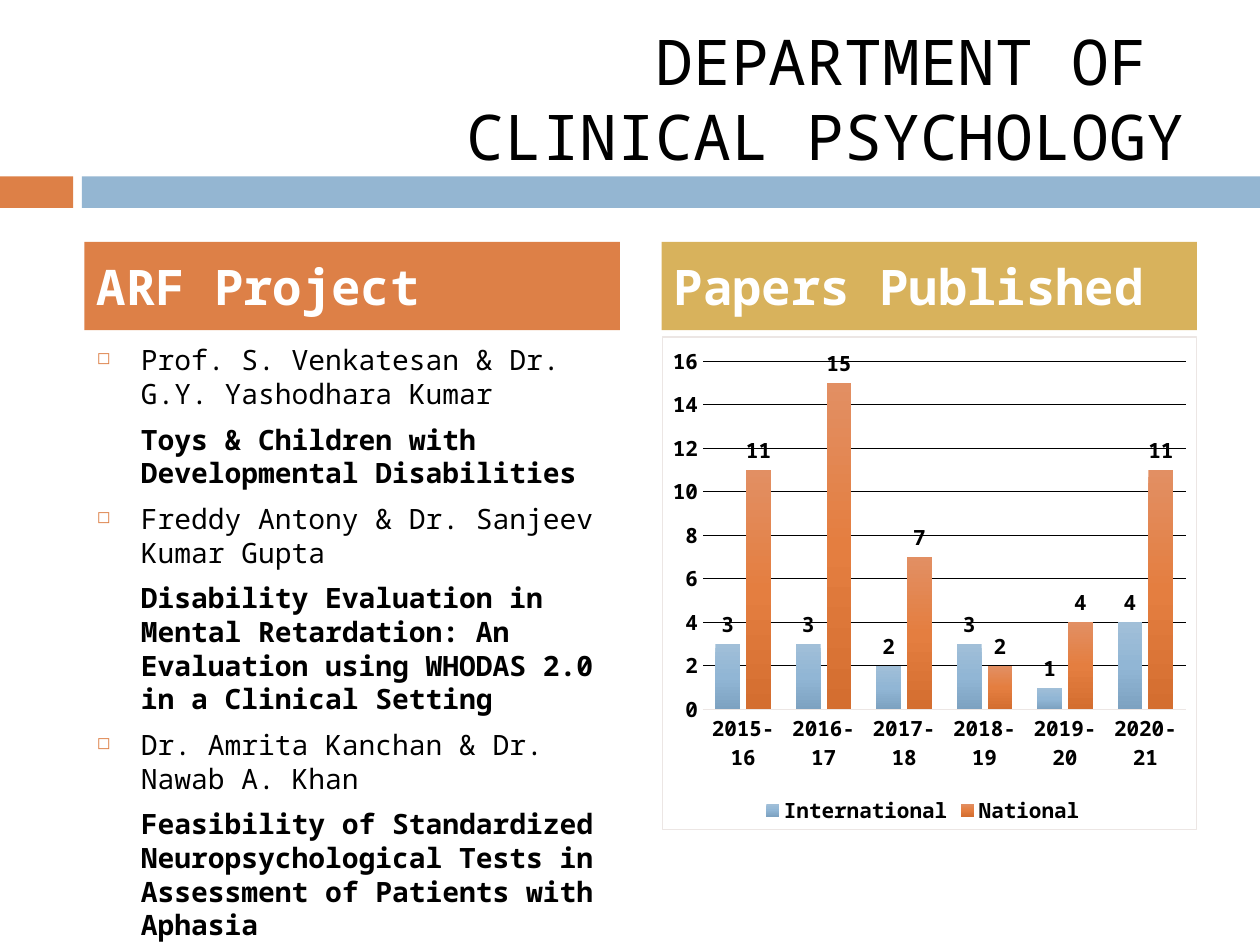
from dataclasses import dataclass

from lxml import etree
from pptx import Presentation
from pptx.chart.data import CategoryChartData
from pptx.dml.color import RGBColor
from pptx.enum.chart import XL_CHART_TYPE, XL_LABEL_POSITION, XL_LEGEND_POSITION, XL_TICK_MARK
from pptx.enum.shapes import MSO_SHAPE
from pptx.enum.text import MSO_ANCHOR, PP_ALIGN
from pptx.oxml import parse_xml
from pptx.oxml.ns import nsdecls, qn
from pptx.util import Inches, Pt

RECT = MSO_SHAPE.RECTANGLE
MIDDLE, TOP = MSO_ANCHOR.MIDDLE, MSO_ANCHOR.TOP
LEFT, RIGHT = PP_ALIGN.LEFT, PP_ALIGN.RIGHT
COLUMNS = XL_CHART_TYPE.COLUMN_CLUSTERED
NO_TICK = XL_TICK_MARK.NONE

W, H = 10, 7.5
COL_W = 4.25
COLS = (0.67, 5.25)
BAND_Y, BAND_H = 1.4, 0.25
HEAD_Y, HEAD_H = 1.92, 0.7
BODY_Y, BODY_H = 2.67, 3.92
INDENT = Inches(0.35)
FONT = "Noto Sans Mono"

COLORS = {
    "orange": "DD8047",
    "blue": "94B6D2",
    "gold": "D8B25C",
    "black": "000000",
    "white": "FFFFFF",
    "border": "ECE6E4",
}
CHART_FONT = {"size": Pt(12), "bold": True, "name": FONT}


@dataclass
class Box:
    x: float
    y: float
    w: float
    h: float

    def emu(self) -> list:
        return [Inches(v) for v in (self.x, self.y, self.w, self.h)]


@dataclass
class Heading:
    text: str
    color: str
    col: int


@dataclass
class Project:
    people: str
    topic: str


@dataclass
class Series:
    name: str
    values: tuple
    stops: tuple


BANDS = [(Box(0, BAND_Y, 0.58, BAND_H), "orange"), (Box(0.65, BAND_Y, W - 0.65, BAND_H), "blue")]
HEADINGS = [Heading("ARF Project", "orange", 0), Heading("Papers Published", "gold", 1)]
PROJECTS = [
    Project("Prof. S. Venkatesan & Dr. G.Y. Yashodhara Kumar",
            "Toys & Children with Developmental Disabilities"),
    Project("Freddy Antony & Dr. Sanjeev Kumar Gupta",
            "Disability Evaluation in Mental Retardation: An Evaluation using WHODAS 2.0 in a Clinical Setting"),
    Project("Dr. Amrita Kanchan & Dr. Nawab A. Khan",
            "Feasibility of Standardized Neuropsychological Tests in Assessment of Patients with Aphasia"),
]
YEARS = [f"{y}-{y % 100 + 1}" for y in range(2015, 2021)]
SERIES = [
    Series("International", (3, 3, 2, 3, 1, 4), ("A1BFD8", "91B6D5", "7DA2C1")),
    Series("National ", (11, 15, 7, 2, 4, 11), ("E28F63", "E47E40", "D46E30")),
]


def rgb(name: str) -> RGBColor:
    return RGBColor.from_string(COLORS[name])


def style(font, color: str, **values) -> None:
    for key, value in values.items():
        setattr(font, key, value)
    font.color.rgb = rgb(color)


def add_rect(s, box: Box, color: str):
    sp = s.shapes.add_shape(RECT, *box.emu())
    sp.shadow.inherit = False
    sp.fill.solid()
    sp.fill.fore_color.rgb = rgb(color)
    sp.line.fill.background()
    return sp


def write(p, text: str, color: str, size: int, bold: bool = False, align=LEFT) -> None:
    p.text = text
    p.alignment = align
    for r in p.runs:
        style(r.font, color, size=Pt(size), bold=bold, name=FONT)


def add_frame(s, box: Box, anchor):
    tf = s.shapes.add_textbox(*box.emu()).text_frame
    tf.word_wrap = True
    tf.vertical_anchor = anchor
    return tf


def add_heading(s, head: Heading) -> None:
    tf = add_rect(s, Box(COLS[head.col], HEAD_Y, COL_W, HEAD_H), head.color).text_frame
    tf.word_wrap = True
    tf.vertical_anchor = MIDDLE
    p = tf.paragraphs[0]
    write(p, head.text, "white", 28, True)
    p.space_before = Pt(7)


def set_bullet(p) -> None:
    pPr = p._p.get_or_add_pPr()
    pPr.set("indent", str(-INDENT))
    clr = etree.SubElement(pPr, qn("a:buClr"))
    etree.SubElement(clr, qn("a:srgbClr"), val=COLORS["orange"])
    etree.SubElement(pPr, qn("a:buSzPct"), val="60000")
    etree.SubElement(pPr, qn("a:buChar"), char="◻")


def add_projects(s, projects: list[Project]) -> None:
    tf = add_frame(s, Box(COLS[0], BODY_Y, COL_W, BODY_H), TOP)
    lines = [(t, b) for pr in projects for t, b in ((pr.people, False), (pr.topic, True))]
    for i, (text, bold) in enumerate(lines):
        p = tf.add_paragraph() if i else tf.paragraphs[0]
        write(p, text, "black", 16, bold)
        p.space_before = Pt(7)
        p._p.get_or_add_pPr().set("marL", str(INDENT))
        if not bold:
            set_bullet(p)


def set_gradient(series, stops: tuple) -> None:
    gs = "".join(f'<a:gs pos="{i * 50000}"><a:srgbClr val="{c}"/></a:gs>' for i, c in enumerate(stops))
    series.format.fill.background()
    spPr = series._element.find(qn("c:spPr"))
    spPr.replace(spPr.find(qn("a:noFill")), parse_xml(
        f'<a:gradFill {nsdecls("a")} rotWithShape="1"><a:gsLst>{gs}</a:gsLst>'
        '<a:lin ang="5400000" scaled="0"/></a:gradFill>'))


def set_chart_area(chart) -> None:
    chart._chartSpace.find(qn("c:txPr")).addprevious(parse_xml(
        f'<c:spPr {nsdecls("c", "a")}>'
        f'<a:solidFill><a:srgbClr val="{COLORS["white"]}"/></a:solidFill>'
        f'<a:ln w="{Pt(0.75)}"><a:solidFill><a:srgbClr val="{COLORS["border"]}"/></a:solidFill></a:ln>'
        '</c:spPr>'))


def set_line(line, color: str, width: float) -> None:
    line.color.rgb = rgb(color)
    line.width = Pt(width)


def add_papers_chart(s) -> None:
    data = CategoryChartData()
    data.categories = YEARS
    for item in SERIES:
        data.add_series(item.name, item.values)
    box = Box(COLS[1], BODY_Y, COL_W, BODY_H)
    chart = s.shapes.add_chart(COLUMNS, *box.emu(), data).chart
    style(chart.font, "black", size=Pt(12), bold=True, name="League Spartan")
    set_chart_area(chart)
    chart.has_title = False
    chart.has_legend = True
    chart.legend.position = XL_LEGEND_POSITION.BOTTOM
    chart.legend.include_in_layout = False
    style(chart.legend.font, "black", **CHART_FONT)

    cat, val = chart.category_axis, chart.value_axis
    for axis in (cat, val):
        axis.major_tick_mark = axis.minor_tick_mark = NO_TICK
        style(axis.tick_labels.font, "black", **CHART_FONT)
    set_line(cat.format.line, "border", 0.75)
    val.format.line.fill.background()
    set_line(val.major_gridlines.format.line, "black", 0.5)
    val.minimum_scale, val.maximum_scale, val.major_unit = 0, 16, 2

    plot = chart.plots[0]
    plot.vary_by_categories = False
    plot.gap_width, plot.overlap = 100, -24
    for series, item in zip(plot.series, SERIES):
        set_gradient(series, item.stops)
        labels = series.data_labels
        labels.show_value = True
        labels.position = XL_LABEL_POSITION.OUTSIDE_END
        style(labels.font, "black", **CHART_FONT)


def main() -> None:
    prs = Presentation()
    prs.slide_width, prs.slide_height = Inches(W), Inches(H)
    s = prs.slides.add_slide(prs.slide_layouts[6])
    for box, color in BANDS:
        add_rect(s, box, color)
    title = add_frame(s, Box(0.58, 0.3, 8.92, 0.95), MIDDLE)
    write(title.paragraphs[0], "DEPARTMENT OF \vCLINICAL PSYCHOLOGY", "black", 36, align=RIGHT)
    add_projects(s, PROJECTS)
    for head in HEADINGS:
        add_heading(s, head)
    add_papers_chart(s)
    prs.save("out.pptx")


if __name__ == "__main__":
    main()
